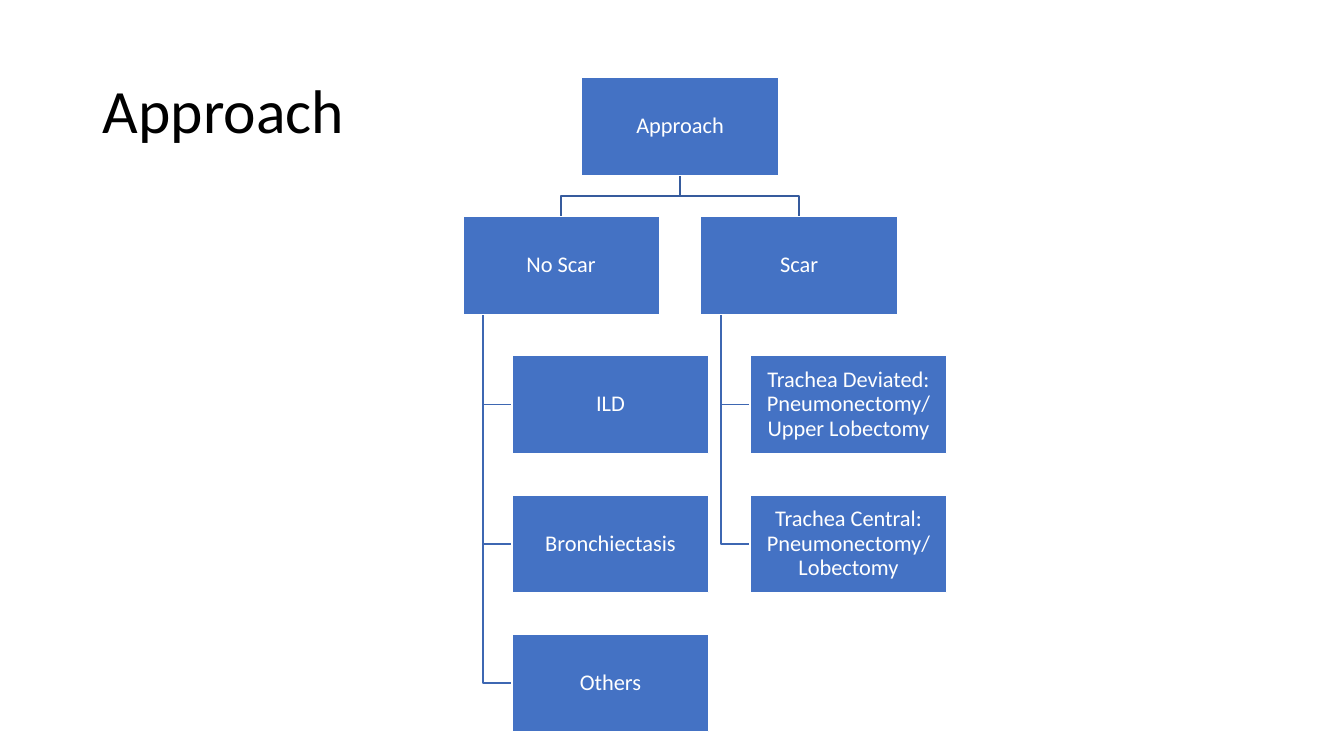
"""Build the Approach slide: a title and a two-branch decision tree."""
from pptx import Presentation
from pptx.dml.color import RGBColor
from pptx.enum.shapes import MSO_SHAPE
from pptx.enum.text import MSO_ANCHOR, PP_ALIGN
from pptx.util import Inches, Pt

RECTANGLE = MSO_SHAPE.RECTANGLE
MIDDLE = MSO_ANCHOR.MIDDLE
LEFT, CENTER = PP_ALIGN.LEFT, PP_ALIGN.CENTER

TITLE = "Approach"
ROOT = "Approach"
BRANCHES = [
    ("No Scar", ["ILD", "Bronchiectasis", "Others"]),
    ("Scar", ["Trachea Deviated: Pneumonectomy/\nUpper Lobectomy",
              "Trachea Central: Pneumonectomy/\nLobectomy"]),
]

SLIDE_W, SLIDE_H = 13.33, 7.5
BOX_W, BOX_H = 1.95, 0.97
TREE_LEFT, TREE_BOTTOM = 4.59, 7.26
COLUMN_STEP, ROW_STEP = 2.36, 1.38
LAST_ROW = 1 + max(len(leaves) for _, leaves in BRANCHES)
TREE_TOP = TREE_BOTTOM - BOX_H - LAST_ROW * ROW_STEP
TRUNK_INSET, LEAF_INDENT = 0.2, 0.49
FONT = "Calibri"
BOX_FILL, BRANCH_LINE, LEAF_LINE = "4472C4", "365B9D", "3E67B2"
WHITE, BLACK = "FFFFFF", "000000"


def color(value):
    return RGBColor.from_string(value)


def write(frame, text, size, ink, align, inset=0.1, after=0):
    frame.word_wrap = True
    frame.vertical_anchor = MIDDLE
    frame.margin_left = frame.margin_right = Inches(inset)
    frame.margin_top = frame.margin_bottom = Inches(min(inset, 0.05))
    paragraph = frame.paragraphs[0]
    paragraph.text = text
    paragraph.alignment = align
    paragraph.line_spacing = 0.9
    paragraph.space_after = Pt(after)
    for run in paragraph.runs:
        run.font.name = FONT
        run.font.size = Pt(size)
        run.font.color.rgb = color(ink)


def row_top(row):
    return TREE_TOP + row * ROW_STEP


def add_box(slide, text, left, row):
    box = slide.shapes.add_shape(RECTANGLE, Inches(left), Inches(row_top(row)),
                                 Inches(BOX_W), Inches(BOX_H))
    box.shadow.inherit = False
    box.fill.solid()
    box.fill.fore_color.rgb = color(BOX_FILL)
    box.line.color.rgb = color(WHITE)
    box.line.width = Pt(1)
    write(box.text_frame, text, 16, WHITE, CENTER, inset=0.01, after=5.6)


def add_link(slide, points, ink):
    start, *turns = [(Inches(x), Inches(y)) for x, y in points]
    builder = slide.shapes.build_freeform(*start)
    builder.add_line_segments(turns, close=False)
    link = builder.convert_to_shape()
    link.shadow.inherit = False
    link.fill.background()
    link.line.color.rgb = color(ink)
    link.line.width = Pt(1)


def add_tree(slide):
    root_left = TREE_LEFT + COLUMN_STEP * (len(BRANCHES) - 1) / 2
    root_center = root_left + BOX_W / 2
    root_bottom = row_top(0) + BOX_H
    elbow = (root_bottom + row_top(1)) / 2
    boxes = [(ROOT, root_left, 0)]
    for column, (branch, leaves) in enumerate(BRANCHES):
        left = TREE_LEFT + column * COLUMN_STEP
        center = left + BOX_W / 2
        add_link(slide, [(root_center, root_bottom), (root_center, elbow),
                         (center, elbow), (center, row_top(1))], BRANCH_LINE)
        boxes.append((branch, left, 1))
        trunk = left + TRUNK_INSET
        leaf_left = left + LEAF_INDENT
        for row, leaf in enumerate(leaves, start=2):
            middle = row_top(row) + BOX_H / 2
            add_link(slide, [(trunk, row_top(1) + BOX_H), (trunk, middle),
                             (leaf_left, middle)], LEAF_LINE)
            boxes.append((leaf, leaf_left, row))
    for text, left, row in boxes:
        add_box(slide, text, left, row)


def main():
    deck = Presentation()
    deck.slide_width, deck.slide_height = Inches(SLIDE_W), Inches(SLIDE_H)
    slide = deck.slides.add_slide(deck.slide_layouts[5])
    title = slide.shapes.title
    title.left, title.top = Inches(0.92), Inches(0.4)
    title.width, title.height = Inches(11.5), Inches(1.45)
    write(title.text_frame, TITLE, 44, BLACK, LEFT)
    add_tree(slide)
    deck.save("out.pptx")


if __name__ == "__main__":
    main()
